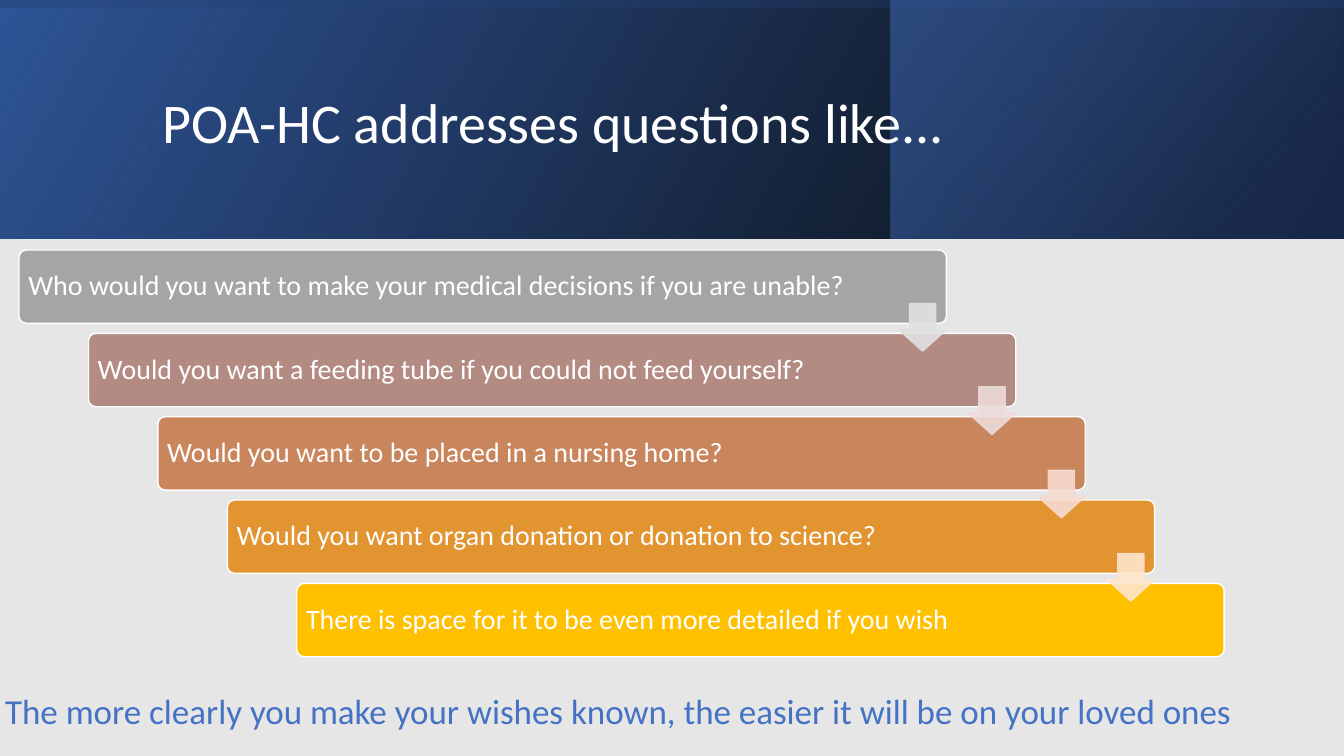
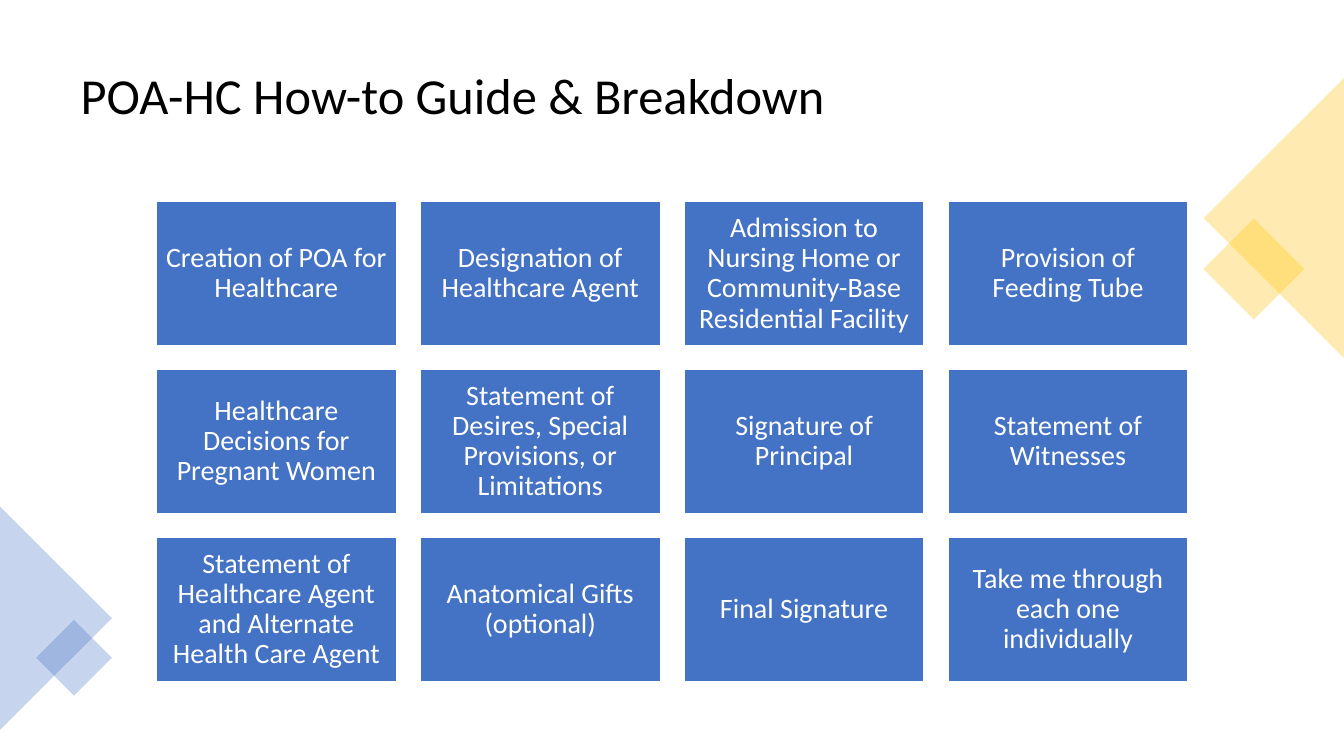
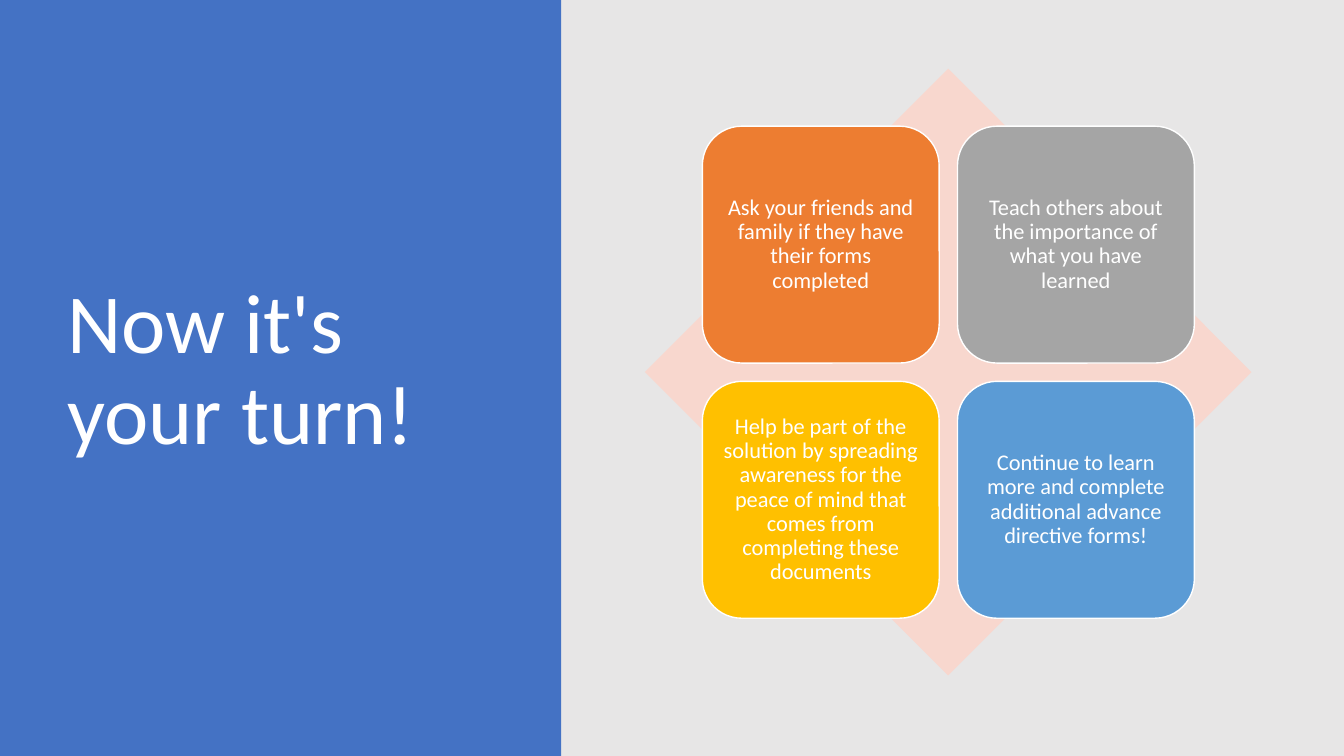
from dataclasses import dataclass
from typing import Optional

from pptx import Presentation
from pptx.dml.color import RGBColor
from pptx.enum.shapes import MSO_SHAPE as SHAPE
from pptx.enum.text import MSO_ANCHOR as ANCHOR, PP_ALIGN as ALIGN
from pptx.oxml.ns import qn
from pptx.util import Cm, Pt

# Shared look
FONT = "Calibri"
WHITE = RGBColor(0xFF, 0xFF, 0xFF)
BLACK = RGBColor(0x00, 0x00, 0x00)
PALE_GREY = RGBColor(0xE7, 0xE6, 0xE6)
BLUE = RGBColor(0x44, 0x72, 0xC4)
DEEP_BLUE = RGBColor(0x2F, 0x55, 0x97)
NAVY = RGBColor(0x20, 0x38, 0x64)
SKY = RGBColor(0x5B, 0x9B, 0xD5)
GOLD = RGBColor(0xFF, 0xC0, 0x00)
ORANGE = RGBColor(0xED, 0x7D, 0x31)
GREY = RGBColor(0xA5, 0xA5, 0xA5)
ROSE = RGBColor(0xB4, 0x8B, 0x83)
COPPER = RGBColor(0xC9, 0x85, 0x5C)
AMBER = RGBColor(0xE1, 0x94, 0x30)
PINK = RGBColor(0xF8, 0xD7, 0xCE)
ARROW_GREY = RGBColor(0xE1, 0xE1, 0xE1)
ARROW_ROSE = RGBColor(0xEC, 0xDB, 0xD9)
ARROW_COPPER = RGBColor(0xF6, 0xDB, 0xD1)
ARROW_AMBER = RGBColor(0xFF, 0xE5, 0xCB)

SLIDE_W, SLIDE_H = 33.87, 19.05
HEADER_H = 6.02


@dataclass(frozen=True)
class Box:
    """Left, top, width and height in centimetres."""
    x: float
    y: float
    w: float
    h: float

    def lengths(self) -> tuple:
        return Cm(self.x), Cm(self.y), Cm(self.w), Cm(self.h)


@dataclass(frozen=True)
class Stop:
    position: float
    color: RGBColor
    alpha: int


@dataclass(frozen=True)
class Wash:
    """A gradient band of the header."""
    box: Box
    angle: int
    stops: tuple
    rotation: int = 0


@dataclass(frozen=True)
class Accent:
    """A translucent corner ornament."""
    kind: SHAPE
    box: Box
    rotation: int
    color: RGBColor


@dataclass(frozen=True)
class Item:
    text: str
    color: RGBColor
    arrow: Optional[RGBColor] = None


HEADER = [
    Wash(Box(0, 0, SLIDE_W, HEADER_H), 30,
         (Stop(0, BLACK, 96), Stop(1, DEEP_BLUE, 100))),
    Wash(Box(22.45, 0, 11.4, HEADER_H), 40,
         (Stop(0.19, NAVY, 68), Stop(1, BLUE, 48))),
    Wash(Box(13.92, -13.92, HEADER_H, SLIDE_W), 10,
         (Stop(0.23, DEEP_BLUE, 16), Stop(0.99, BLACK, 45)), 270),
]
QUESTIONS = [
    Item("Who would you want to make your medical decisions if you are unable?", GREY, ARROW_GREY),
    Item("Would you want a feeding tube if you could not feed yourself?", ROSE, ARROW_ROSE),
    Item("Would you want to be placed in a nursing home?", COPPER, ARROW_COPPER),
    Item("Would you want organ donation or donation to science?", AMBER, ARROW_AMBER),
    Item("There is space for it to be even more detailed if you wish", GOLD),
]
ACCENTS = [
    Accent(SHAPE.RECTANGLE, Box(30.7, 5.88, 1.8, 1.8), 45, GOLD),
    Accent(SHAPE.ISOSCELES_TRIANGLE, Box(28.58, 3.73, 7.04, 3.53), 270, GOLD),
    Accent(SHAPE.ISOSCELES_TRIANGLE, Box(-1.4, 14.17, 5.62, 2.82), 90, BLUE),
    Accent(SHAPE.RECTANGLE, Box(1.19, 15.9, 1.35, 1.35), 45, BLUE),
]
SECTIONS = [
    "Creation of POA for Healthcare",
    "Designation of Healthcare Agent",
    "Admission to Nursing Home or Community-Base Residential Facility",
    "Provision of Feeding Tube",
    "Healthcare Decisions for Pregnant Women",
    "Statement of Desires, Special Provisions, or Limitations",
    "Signature of Principal",
    "Statement of Witnesses",
    "Statement of Healthcare Agent and Alternate Health Care Agent",
    "Anatomical Gifts (optional)",
    "Final Signature",
    "Take me through each one individually",
]
ACTIONS = [
    Item("Ask your friends and family if they have their forms completed", ORANGE),
    Item("Teach others about the importance of what you have learned", GREY),
    Item("Help be part of the solution by spreading awareness for the peace of mind "
         "that comes from completing these documents", GOLD),
    Item("Continue to learn more and complete additional advance directive forms!", SKY),
]


def put_text(sp, text: str, *, size: float, color: RGBColor = WHITE,
             align: ALIGN = ALIGN.LEFT, spacing: float = 0.9, inset: float = 0.18) -> None:
    tf = sp.text_frame
    tf.word_wrap = True
    tf.vertical_anchor = ANCHOR.MIDDLE
    tf.margin_left = tf.margin_right = tf.margin_top = tf.margin_bottom = Cm(inset)
    p = tf.paragraphs[0]
    p.alignment = align
    p.line_spacing = spacing
    r = p.add_run()
    r.text = text
    r.font.name = FONT
    r.font.size = Pt(size)
    r.font.color.rgb = color


def set_alpha(sp, *alphas: int) -> None:
    """Give the shape's colours, in order, their opacity in percent."""
    for clr, alpha in zip(sp.element.spPr.iter(qn("a:srgbClr")), alphas):
        el = clr.makeelement(qn("a:alpha"), {"val": str(alpha * 1000)})
        clr.append(el)


def add_block(slide, kind: SHAPE, box: Box, color: Optional[RGBColor] = None,
              line: Optional[RGBColor] = None):
    sp = slide.shapes.add_shape(kind, *box.lengths())
    sp.shadow.inherit = False
    if color is not None:
        sp.fill.solid()
        sp.fill.fore_color.rgb = color
    if line is None:
        sp.line.fill.background()
    else:
        sp.line.color.rgb = line
        sp.line.width = Pt(1)
    return sp


def add_wash(slide, wash: Wash) -> None:
    sp = add_block(slide, SHAPE.RECTANGLE, wash.box)
    sp.rotation = wash.rotation
    sp.element.spPr.find(qn("a:xfrm")).set("flipH", "1")
    sp.fill.gradient()
    sp.fill.gradient_angle = wash.angle
    for target, stop in zip(sp.fill.gradient_stops, wash.stops):
        target.position = stop.position
        target.color.rgb = stop.color
    set_alpha(sp, *(stop.alpha for stop in wash.stops))


def add_title(slide, text: str, box: Box, size: float, color: RGBColor = WHITE) -> None:
    sp = slide.shapes.title
    sp.left, sp.top, sp.width, sp.height = box.lengths()
    put_text(sp, text, size=size, color=color, inset=0.25)
    # Bring the title in front of the bands drawn so far
    sp.element.getparent().append(sp.element)


def build_questions(slide) -> None:
    for wash in HEADER:
        add_wash(slide, wash)
    add_title(slide, "POA-HC addresses questions like...", Box(3.84, 0.97, 27, 4.37), 40)

    # Staircase of bars, then the arrows on top
    steps = [(0.48 + 1.75 * i, 6.3 + 2.1 * i, item) for i, item in enumerate(QUESTIONS)]
    for x, y, item in steps:
        bar = add_block(slide, SHAPE.ROUNDED_RECTANGLE, Box(x, y, 23.37, 1.85), item.color, WHITE)
        bar.adjustments[0] = 0.1
        put_text(bar, item.text, size=20)
    for x, y, item in steps:
        if item.arrow is not None:
            box = Box(x + 22.17, y + 1.35, 1.2, 1.2)
            arrow = add_block(slide, SHAPE.DOWN_ARROW, box, item.arrow, item.arrow)
            arrow.adjustments[0], arrow.adjustments[1] = 0.55, 0.45
            set_alpha(arrow, 90, 90)

    # Closing line
    closing = slide.shapes.add_textbox(*Box(0, 17.25, 33.5, 1.55).lengths())
    put_text(closing, "The more clearly you make your wishes known, the easier it will be "
             "on your loved ones", size=25, color=BLUE, spacing=0.7, inset=0.13)


def build_guide(slide) -> None:
    slide.background.fill.solid()
    slide.background.fill.fore_color.rgb = WHITE
    add_title(slide, "POA-HC How-to Guide & Breakdown", Box(1.78, 0.89, 30.3, 3.15), 36, BLACK)
    for accent in ACCENTS:
        sp = add_block(slide, accent.kind, accent.box, accent.color)
        sp.rotation = accent.rotation
        set_alpha(sp, 30)

    # Four columns of sections
    for i, text in enumerate(SECTIONS):
        row, col = divmod(i, 4)
        box = Box(3.94 + 6.65 * col, 5.08 + 4.23 * row, 6.05, 3.63)
        tile = add_block(slide, SHAPE.RECTANGLE, box, BLUE, WHITE)
        put_text(tile, text, size=20, align=ALIGN.CENTER)


def build_actions(slide) -> None:
    add_block(slide, SHAPE.RECTANGLE, Box(0, 0, 14.14, SLIDE_H), BLUE)
    add_title(slide, "Now it's your turn!", Box(1.45, 1.73, 10.57, 15.29), 60)

    # Two by two cards over a diamond
    add_block(slide, SHAPE.DIAMOND, Box(16.25, 1.73, 15.29, 15.29), PINK)
    for i, item in enumerate(ACTIONS):
        row, col = divmod(i, 2)
        box = Box(17.7 + 6.43 * col, 3.18 + 6.43 * row, 5.97, 5.97)
        card = add_block(slide, SHAPE.ROUNDED_RECTANGLE, box, item.color, WHITE)
        put_text(card, item.text, size=16, align=ALIGN.CENTER)


def main() -> None:
    prs = Presentation()
    prs.slide_width, prs.slide_height = Cm(SLIDE_W), Cm(SLIDE_H)
    fill = prs.slide_master.background.fill
    fill.solid()
    fill.fore_color.rgb = PALE_GREY
    title_only = prs.slide_layouts[5]
    for build in (build_questions, build_guide, build_actions):
        build(prs.slides.add_slide(title_only))
    prs.save("out.pptx")


if __name__ == "__main__":
    main()
